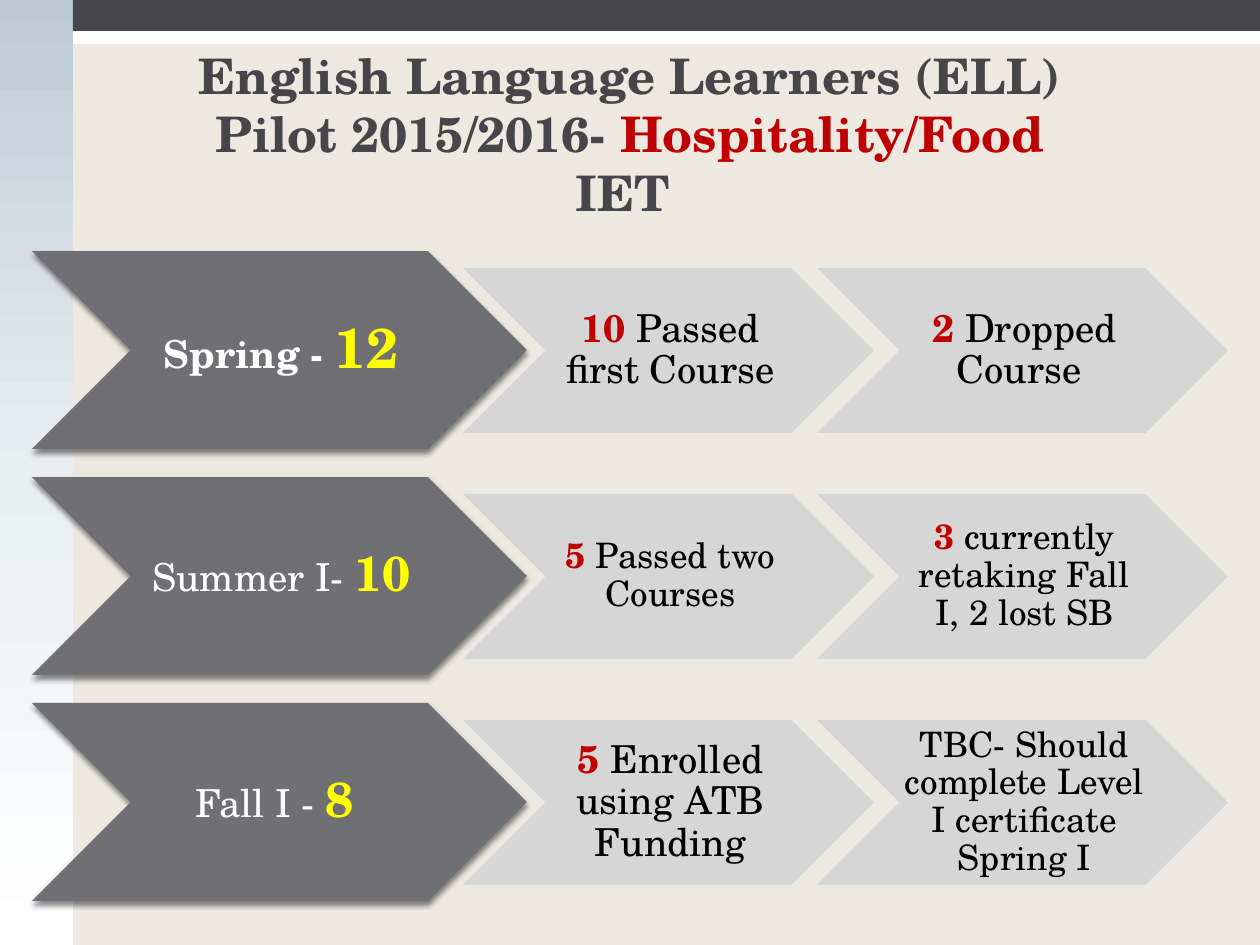
"""Build the English Language Learners pilot slide with its chevron rows."""
from copy import deepcopy
from dataclasses import dataclass

from lxml.etree import SubElement
from pptx import Presentation
from pptx.dml.color import RGBColor
from pptx.enum.shapes import MSO_SHAPE as Shape
from pptx.enum.text import MSO_ANCHOR as Anchor, MSO_AUTO_SIZE as AutoSize, PP_ALIGN as Align
from pptx.oxml.ns import qn
from pptx.util import Emu, Pt

PX = 914400 // 126


@dataclass(frozen=True)
class Theme:
    font: str = "TeX Gyre Schola"
    paper: str = "EDE9E1"
    white: str = "FFFFFF"
    slate: str = "46464A"
    stage: str = "6F6F74"
    result: str = "D5D5D6"
    mist: tuple[str, ...] = ("BECBD5", "E9EEF1", "FFFFFF")
    red: str = "C00000"
    yellow: str = "FFFF00"
    black: str = "000000"
    title_size: int = 28
    large: int = 22
    small: int = 20
    count: int = 28
    big_count: int = 32


THEME = Theme()


@dataclass(frozen=True)
class Span:
    text: str
    color: str
    size: int
    bold: bool = False


@dataclass(frozen=True)
class Column:
    left: int
    drop: int
    width: int
    height: int
    fill: str
    opacity: int = 100
    shadow: bool = False


@dataclass(frozen=True)
class Frame:
    left: int
    top: int
    width: int
    height: int

    def emu(self) -> list[Emu]:
        return [Emu(n * PX) for n in (self.left, self.top, self.width, self.height)]


def rgb(color: str) -> RGBColor:
    return RGBColor.from_string(color)


def add_block(page, kind, frame: Frame, color: str):
    block = page.shapes.add_shape(kind, *frame.emu())
    block.shadow.inherit = False
    block.fill.solid()
    block.fill.fore_color.rgb = rgb(color)
    block.line.fill.background()
    return block


def shade_down(block, colors: tuple[str, ...]) -> None:
    block.fill.gradient()
    stop_list = next(block._element.iter(qn("a:gsLst")))
    stop_list.insert(1, deepcopy(stop_list[0]))
    for index, (stop, color) in enumerate(zip(block.fill.gradient_stops, colors)):
        stop.position = index / (len(colors) - 1)
        stop.color.rgb = rgb(color)
    block.fill.gradient_angle = 270


def set_opacity(block, percent: int) -> None:
    color = next(block._element.spPr.iter(qn("a:srgbClr")))
    SubElement(color, qn("a:alpha"), val=str(percent * 1000))


def cast_shadow(block) -> None:
    effects = block._element.spPr.find(qn("a:effectLst"))
    shadow = SubElement(effects, qn("a:outerShdw"), blurRad=str(Pt(3)),
                        dist=str(Pt(2.4)), dir="5400000", rotWithShape="0")
    color = SubElement(shadow, qn("a:srgbClr"), val=THEME.black)
    SubElement(color, qn("a:alpha"), val="45000")


def write(frame, spans: list[Span], anchor, spacing: float) -> None:
    frame.word_wrap = True
    frame.auto_size = AutoSize.NONE
    frame.vertical_anchor = anchor
    para = frame.paragraphs[0]
    para.alignment = Align.CENTER
    para.line_spacing = spacing
    para.font.name = THEME.font
    for span in spans:
        run = para.add_run()
        run.text = span.text
        run.font.name = THEME.font
        run.font.size = Pt(span.size)
        run.font.bold = span.bold
        run.font.color.rgb = rgb(span.color)


def add_chevron(page, column: Column, row_top: int, spans: list[Span]) -> None:
    frame = Frame(column.left, row_top + column.drop, column.width, column.height)
    chevron = add_block(page, Shape.CHEVRON, frame, column.fill)
    if column.opacity < 100:
        set_opacity(chevron, column.opacity)
    if column.shadow:
        cast_shadow(chevron)
    text = chevron.text_frame
    text.margin_left, text.margin_right = Emu(4 * PX), 0
    text.margin_top = text.margin_bottom = Emu(2 * PX)
    write(text, spans, Anchor.MIDDLE, 0.9)


def stage(label: str, count: str, count_size: int, bold: bool = False) -> list[Span]:
    return [Span(label, THEME.white, THEME.large, bold),
            Span(count, THEME.yellow, count_size, True)]


def result(count: str, label: str, size: int) -> list[Span]:
    number = [Span(count, THEME.red, size, True)] if count else []
    return number + [Span(label, THEME.black, size)]


COLUMNS = (
    Column(32, 0, 495, 198, THEME.stage, shadow=True),
    Column(463, 17, 411, 165, THEME.result, opacity=90),
    Column(817, 17, 411, 165, THEME.result, opacity=90),
)
FIRST_ROW, ROW_PITCH = 251, 226
ROWS = (
    (stage("Spring - ", "12", THEME.big_count, bold=True),
     result("10 ", "Passed first Course", THEME.large),
     result("2", " Dropped Course ", THEME.large)),
    (stage("Summer I- ", "10", THEME.count),
     result("5", " Passed two Courses", THEME.small),
     result("3 ", "currently retaking Fall I, 2 lost SB", THEME.small)),
    (stage("Fall I - ", "8 ", THEME.count),
     result("5", " Enrolled using ATB Funding", THEME.large),
     result("", "TBC- Should complete Level I certificate Spring I", THEME.small)),
)
TITLE = [
    Span("English Language Learners (ELL) Pilot 2015/2016- ", THEME.slate, THEME.title_size, True),
    Span("Hospitality/Food ", THEME.red, THEME.title_size, True),
    Span("IET ", THEME.slate, THEME.title_size, True),
]


def main() -> None:
    deck = Presentation()
    deck.slide_width, deck.slide_height = Emu(1260 * PX), Emu(945 * PX)
    page = deck.slides.add_slide(deck.slide_layouts[5])
    page.background.fill.solid()
    page.background.fill.fore_color.rgb = rgb(THEME.paper)

    add_block(page, Shape.RECTANGLE, Frame(0, 0, 1260, 44), THEME.white)
    side_band = add_block(page, Shape.RECTANGLE, Frame(0, 0, 73, 945), THEME.white)
    shade_down(side_band, THEME.mist)
    add_block(page, Shape.RECTANGLE, Frame(73, 0, 1187, 31), THEME.slate)

    title = page.shapes.title
    title.left, title.top, title.width, title.height = Frame(155, 165, 949, 63).emu()
    write(title.text_frame, TITLE, Anchor.BOTTOM, 1.0)

    for index, row in enumerate(ROWS):
        for column, spans in zip(COLUMNS, row):
            add_chevron(page, column, FIRST_ROW + index * ROW_PITCH, spans)
    deck.save("out.pptx")


if __name__ == "__main__":
    main()
